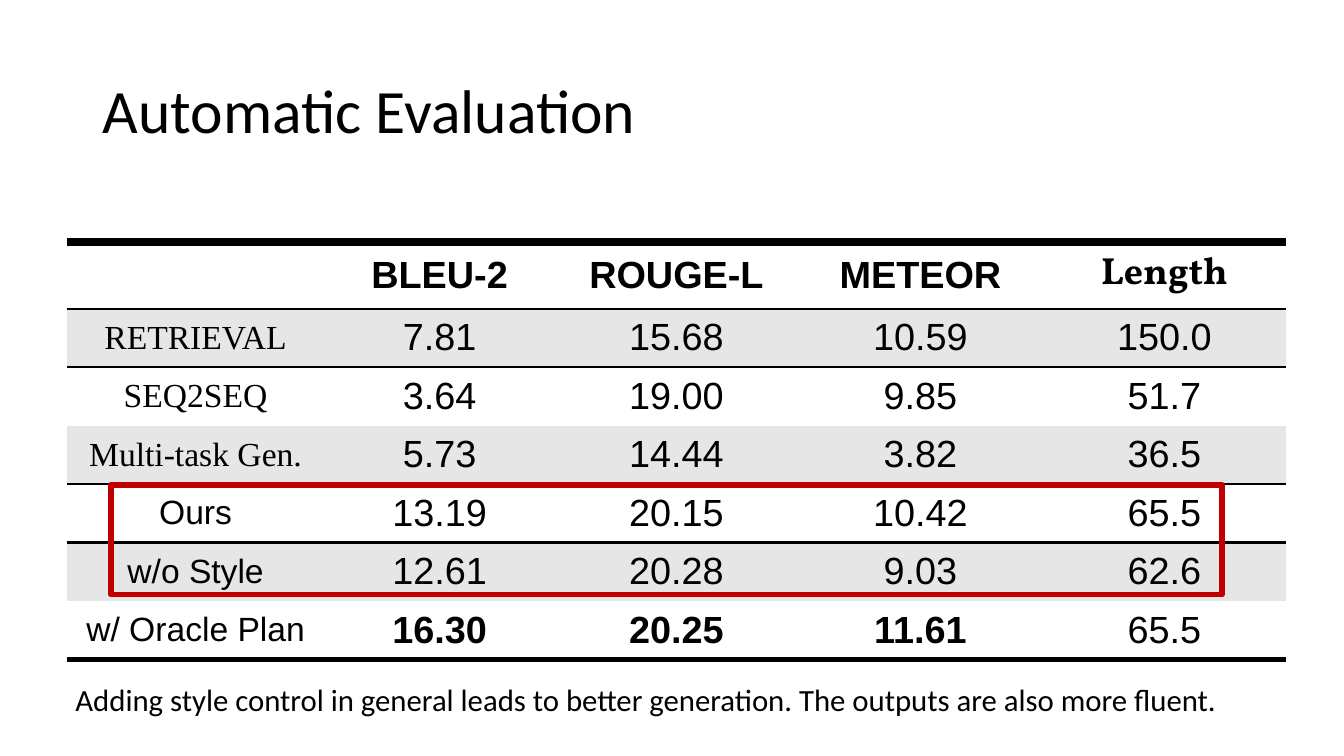
import pptx
import pptx.dml.color
import pptx.enum.shapes
import pptx.enum.text
import pptx.oxml
import pptx.oxml.ns
import pptx.util
from pptx.util import Inches

NO_STYLE_NO_GRID = "{2D5ABB26-0587-4C30-8999-92F81FD0307C}"
METRICS = ["", "BLEU-2", "ROUGE-L", "METEOR", "Length"]
SYSTEMS = [
    ["RETRIEVAL", "7.81", "15.68", "10.59", "150.0"],
    ["SEQ2SEQ", "3.64", "19.00", "9.85", "51.7"],
    ["Multi-task Gen.", "5.73", "14.44", "3.82", "36.5"],
    ["Ours", "13.19", "20.15", "10.42", "65.5"],
    ["w/o Style", "12.61", "20.28", "9.03", "62.6"],
    ["w/ Oracle Plan", "16.30", "20.25", "11.61", "65.5"],
]
COLUMN_WIDTHS = [2.56, 2.28, 2.42, 2.42, 2.42]
ROW_HEIGHT = 0.58
BASELINE_ROWS = range(1, 4)
BEST_ROW = 6
# Rules above (T) and below (B) each row, in points
RULES = {0: {"T": 6, "B": 1.5}, 1: {"T": 1.5}, 3: {"B": 2.25},
         4: {"T": 2.25}, 6: {"B": 4.5}}


def color(code):
    return pptx.dml.color.RGBColor.from_string(code)


class SlideBuilder:
    ink, band, accent = "000000", "E7E6E6", "C00000"
    body_font, table_font, baseline_font = "Calibri", "Arial", "Times New Roman"

    def __init__(self, deck):
        self.page = deck.slides.add_slide(deck.slide_layouts[5])

    def add_span(self, para, text, size, font, bold=False):
        span = para.add_run()
        span.text = text
        span.font.size = pptx.util.Pt(size)
        span.font.name = font
        span.font.bold = bold
        span.font.color.rgb = color(self.ink)

    def title(self, text, left, top, width, height):
        box = self.page.shapes.title
        box.left, box.top = Inches(left), Inches(top)
        box.width, box.height = Inches(width), Inches(height)
        box.text_frame.vertical_anchor = pptx.enum.text.MSO_ANCHOR.MIDDLE
        para = box.text_frame.paragraphs[0]
        para.alignment = pptx.enum.text.PP_ALIGN.LEFT
        para.line_spacing = 0.9
        self.add_span(para, text, 44, self.body_font)

    def caption(self, text, left, top, width, height):
        box = self.page.shapes.add_textbox(
            Inches(left), Inches(top), Inches(width), Inches(height))
        box.text_frame.word_wrap = False
        box.text_frame.auto_size = pptx.enum.text.MSO_AUTO_SIZE.SHAPE_TO_FIT_TEXT
        self.add_span(box.text_frame.paragraphs[0], text, 22, self.body_font)

    def frame(self, left, top, width, height):
        box = self.page.shapes.add_shape(
            pptx.enum.shapes.MSO_SHAPE.RECTANGLE,
            Inches(left), Inches(top), Inches(width), Inches(height))
        box.shadow.inherit = False
        box.fill.background()
        box.line.color.rgb = color(self.accent)
        box.line.width = pptx.util.Pt(4)

    def rule(self, cell, side, points):
        width = pptx.util.Pt(points)
        cell._tc.get_or_add_tcPr().append(pptx.oxml.parse_xml(
            f'<a:ln{side} {pptx.oxml.ns.nsdecls("a")} w="{width}"><a:solidFill>'
            f'<a:srgbClr val="{self.ink}"/></a:solidFill></a:ln{side}>'))

    def cell(self, cell, text, row, column):
        cell.vertical_anchor = pptx.enum.text.MSO_ANCHOR.MIDDLE
        cell.margin_left = cell.margin_right = Inches(0.13)
        cell.margin_top = cell.margin_bottom = Inches(0.07)
        for side, points in RULES.get(row, {}).items():
            self.rule(cell, side, points)
        if row % 2:
            cell.fill.solid()
            cell.fill.fore_color.rgb = color(self.band)
        else:
            cell.fill.background()
        if not text:
            return
        font = self.table_font
        if text == "Length":
            font = "Vollkorn"
        elif column == 0 and row in BASELINE_ROWS:
            font = self.baseline_font
        bold = row == 0 or (row == BEST_ROW and 0 < column < 4)
        para = cell.text_frame.paragraphs[0]
        para.alignment = pptx.enum.text.PP_ALIGN.CENTER
        self.add_span(para, text, 27 if column else 24, font, bold)

    def table(self, rows, left, top):
        table = self.page.shapes.add_table(
            len(rows), len(COLUMN_WIDTHS), Inches(left), Inches(top),
            Inches(sum(COLUMN_WIDTHS)), Inches(ROW_HEIGHT * len(rows))).table
        table.first_row = table.horz_banding = False
        style = table._tbl.tblPr.find(pptx.oxml.ns.qn("a:tableStyleId"))
        style.text = NO_STYLE_NO_GRID
        for column, width in zip(table.columns, COLUMN_WIDTHS):
            column.width = Inches(width)
        for row, texts in enumerate(rows):
            table.rows[row].height = Inches(ROW_HEIGHT)
            for column, text in enumerate(texts):
                self.cell(table.cell(row, column), text, row, column)


def main():
    deck = pptx.Presentation()
    deck.slide_width, deck.slide_height = Inches(13.33), Inches(7.5)
    slide = SlideBuilder(deck)

    # Title
    slide.title("Automatic Evaluation", 0.92, 0.4, 11.5, 1.45)

    # Scores, with a frame around the proposed systems
    slide.table([METRICS] + SYSTEMS, 0.66, 2.4)
    slide.frame(1.1, 4.81, 11.02, 1.09)

    # Takeaway
    slide.caption("Adding style control in general leads to better generation. "
                  "The outputs are also more fluent.", 0.65, 6.7, 11.65, 0.47)

    deck.save("out.pptx")


if __name__ == "__main__":
    main()
